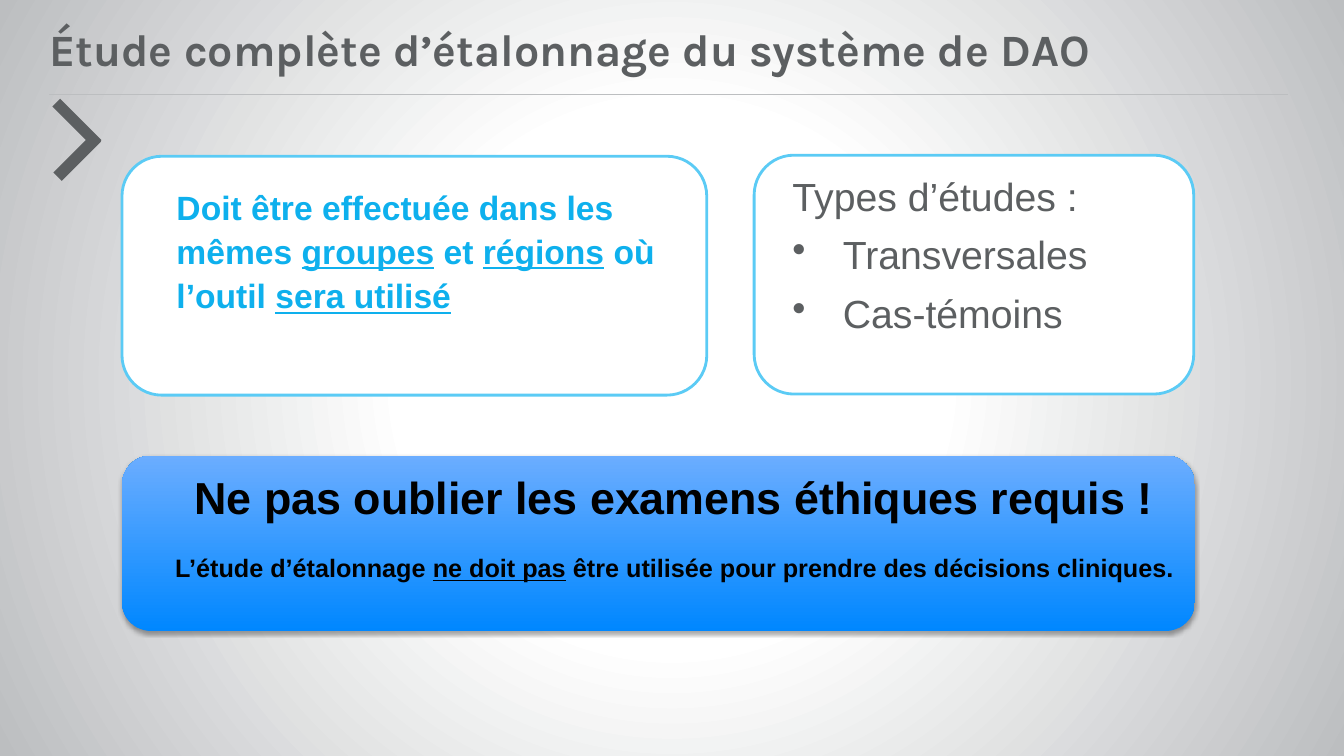
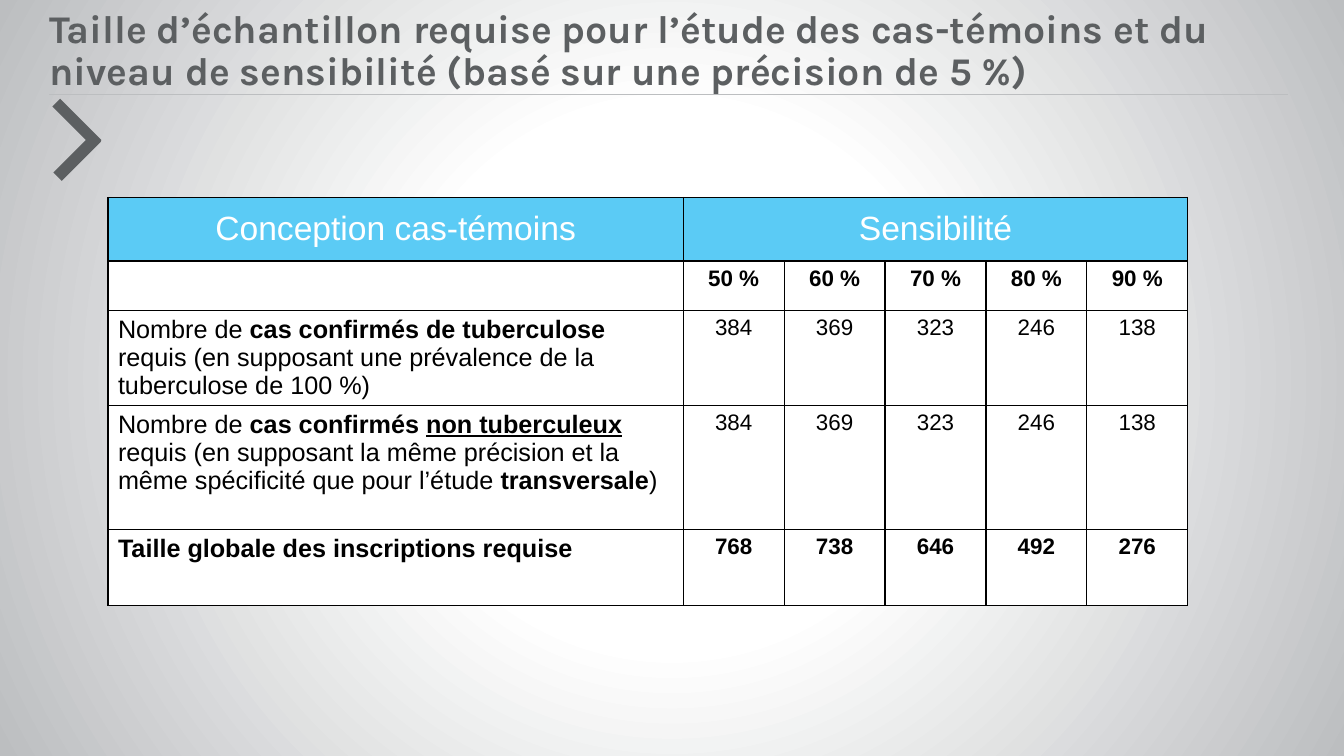
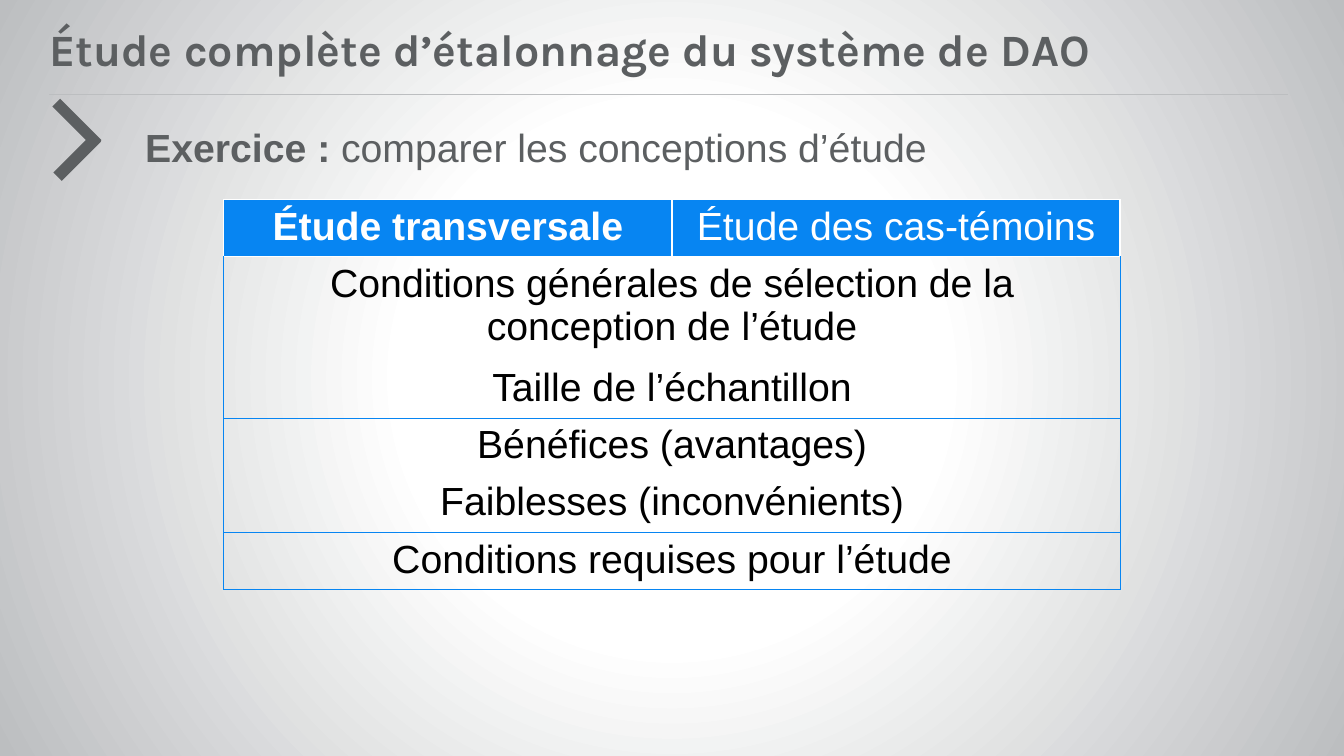
from pptx import Presentation, util as u
from pptx.dml.color import RGBColor
from pptx.enum import shapes, text
from pptx.oxml import parse_xml
from pptx.oxml.ns import nsdecls

W, H = 13.33, 7.5
COLORS = {"grey": "5C5F61", "rule": "BCBEC0", "white": "FFFFFF", "black": "000000",
          "sky": "5BCBF5", "cyan": "0EB0ED", "blue": "0785F2",
          "deep": "0087FF", "light": "6BADFF"}
CENTER, LEFT = text.PP_ALIGN.CENTER, text.PP_ALIGN.LEFT
TOP, MIDDLE = text.MSO_ANCHOR.TOP, text.MSO_ANCHOR.MIDDLE
RECT, ROUND = shapes.MSO_SHAPE.RECTANGLE, shapes.MSO_SHAPE.ROUNDED_RECTANGLE
BOLD, PLAIN, UNDER = {"bold": True}, {"bold": False}, {"underline": True}

# Boxes are (left, top, width, height) on a grid of 100 columns and 100 rows
TITLE = (3.68, 1.33, 89.1, 11.07)
CHEVRON = (3.5, 13, 4.4, 11.2)
RULE = (3.68, 12.53, 92.12)


def rgb(name):
    return RGBColor.from_string(COLORS[name])


def inside(box, x, y, w, h):
    """Part of a box, given as shares of its size."""
    left, top, width, height = box
    return left + x * width, top + y * height, w * width, h * height


def emu(box):
    x, y, w, h = box
    return [u.Inches(v * size / 100) for v, size in ((x, W), (y, H), (w, W), (h, H))]


def write(tf, paras, size=18, color="black", font="Arial", bold=False, align=LEFT,
          anchor=None, spacing=None, before=0, margin=0, indent=0, bullets=()):
    """Each paragraph is a list of runs: a string, or a string with its own format."""
    tf.word_wrap = True
    if anchor is not None:
        tf.vertical_anchor = anchor
    for i, runs in enumerate(paras):
        p = tf.paragraphs[0] if i == 0 else tf.add_paragraph()
        p.alignment = align
        if spacing:
            p.line_spacing = spacing
        p.space_before = u.Pt(before if i else 0)
        pPr = p._p.get_or_add_pPr()
        left, first = (0.75, -0.5) if i in bullets else (margin, indent)
        pPr.set("marL", str(u.Inches(left)))
        pPr.set("indent", str(u.Inches(first)))
        if i in bullets:
            pPr.append(parse_xml(f'<a:buChar {nsdecls("a")} char="•"/>'))
        for run in runs:
            words, extra = (run, {}) if isinstance(run, str) else run
            r = p.add_run()
            r.text = words
            r.font.name, r.font.color.rgb = font, rgb(color)
            r.font.size = u.Pt(extra.get("size", size))
            r.font.bold = extra.get("bold", bold)
            if extra.get("underline"):
                r.font.underline = True


def add_text(s, box, paras, **fmt):
    tf = s.shapes.add_textbox(*emu(box)).text_frame
    tf.margin_left = tf.margin_right = u.Inches(fmt.pop("side", 0))
    write(tf, paras, **fmt)


def add_box(parent, kind, box, fill=None, line=None):
    sp = parent.shapes.add_shape(kind, *emu(box))
    sp.shadow.inherit = False
    if fill:
        sp.fill.solid()
        sp.fill.fore_color.rgb = rgb(fill)
    if line:
        sp.line.color.rgb = rgb(line)
        sp.line.width = u.Pt(2)
    else:
        sp.line.fill.background()
    return sp


# Shared look: background, title, rule and chevron
def set_background(master):
    stops = "".join(f'<a:gs pos="{pos}000"><a:srgbClr val="{COLORS[c]}"/></a:gs>'
                    for pos, c in ((0, "white"), (35, "white"), (100, "rule")))
    cSld = master.element.cSld
    if cSld.bg is not None:
        cSld.remove(cSld.bg)
    cSld.insert(0, parse_xml(
        f'<p:bg {nsdecls("p", "a")}><p:bgPr><a:gradFill rotWithShape="1">'
        f'<a:gsLst>{stops}</a:gsLst><a:path path="circle">'
        '<a:fillToRect l="50000" t="50000" r="50000" b="50000"/></a:path>'
        '</a:gradFill><a:effectLst/></p:bgPr></p:bg>'))


def add_chevron(s, box):
    group = s.shapes.add_group_shape()
    for part, angle in (((0.04, 0.625, 0.94, 0.14), 135), ((0.01, 0.23, 0.99, 0.13), 225)):
        add_box(group, RECT, inside(box, *part), "grey").rotation = angle


def new_slide(prs, title, size=32):
    s = prs.slides.add_slide(prs.slide_layouts[5])
    x, y, w = RULE
    left, top, width, _ = emu((x, y, w, 0))
    rule = s.shapes.add_connector(shapes.MSO_CONNECTOR.STRAIGHT, left, top, left + width, top)
    rule.line.color.rgb = rgb("rule")
    rule.line.width = u.Pt(0.75)
    rule._element.spPr.append(parse_xml(f'<a:effectLst {nsdecls("a")}/>'))
    add_chevron(s, CHEVRON)
    ph = s.shapes.title
    ph.left, ph.top, ph.width, ph.height = emu(TITLE)
    tf = ph.text_frame
    tf.auto_size = text.MSO_AUTO_SIZE.NONE
    tf.margin_left = tf.margin_right = 0
    write(tf, [[title]], size=size, color="grey", font="Karla", bold=True,
          anchor=MIDDLE, spacing=0.9)
    return s


# Tables
def set_borders(cell, sides, color, width):
    """Draw the sides named among L, R, T and B, and clear the others."""
    tcPr = cell._tc.get_or_add_tcPr()
    for i, side in enumerate("LRTB"):
        paint = (f'<a:solidFill><a:srgbClr val="{COLORS[color]}"/></a:solidFill>'
                 if side in sides else "<a:noFill/>")
        tcPr.insert(i, parse_xml(
            f'<a:ln{side} {nsdecls("a")} w="{u.Pt(width)}">{paint}</a:ln{side}>'))


def add_grid(s, box, cols, rows):
    """Empty table whose columns and rows share the box by weight."""
    x, y, w, h = emu(box)
    table = s.shapes.add_table(len(rows), len(cols), x, y, w, h).table
    table.first_row = table.horz_banding = False
    for lines, weights, total, side in ((table.columns, cols, w, "width"),
                                        (table.rows, rows, h, "height")):
        for line, weight in zip(lines, weights):
            setattr(line, side, int(total * weight / sum(weights)))
    return table


def fill_cell(cell, runs, fill=None, sides="LRTB", line="black", width=1, **fmt):
    write(cell.text_frame, [runs], **fmt)
    cell.vertical_anchor = fmt.get("anchor", TOP)
    if fill:
        cell.fill.solid()
        cell.fill.fore_color.rgb = rgb(fill)
    else:
        cell.fill.background()
    set_borders(cell, sides, line, width)


def add_sample_table(s, box, head, body):
    table = add_grid(s, box, [5.7] + [1] * 5, [0.63, 0.49, 0.93, 1.23, 0.76])
    table.cell(0, 1).merge(table.cell(0, 5))
    for c in range(6):
        fill_cell(table.cell(0, c), head[c:c + 1], "sky", size=24, color="white",
                  align=CENTER, anchor=MIDDLE)
    for r, (label, values, bold) in enumerate(body, 1):
        fill_cell(table.cell(r, 0), label, "white", bold=bold)
        for c, value in enumerate(values, 1):
            fill_cell(table.cell(r, c), [value], "white", size=16, bold=bold, align=CENTER)


def add_design_table(s, box, head, body):
    table = add_grid(s, box, [1, 1], [1] * (len(body) + 1))
    for c, run in enumerate(head):
        fill_cell(table.cell(0, c), [run], "blue", line="white", size=28,
                  color="white", align=CENTER)
    for r, (label, sides) in enumerate(body, 1):
        table.cell(r, 0).merge(table.cell(r, 1))
        for c, runs in enumerate(([label], [])):
            fill_cell(table.cell(r, c), runs, sides=sides, line="blue", width=0.75,
                      size=28, align=CENTER)


# Regions of the first slide
def add_card(s, box, part, paras, **fmt):
    add_box(s, ROUND, box, "white", "sky")
    add_text(s, inside(box, *part), paras, spacing=1.1, before=5, **fmt)


def add_banner(s, box, paras):
    sp = add_box(s, ROUND, box)
    sp.fill.gradient()
    sp.fill.gradient_angle = 90
    for stop, color, pos in zip(sp.fill.gradient_stops, ("deep", "light"), (0, 1)):
        stop.color.rgb = rgb(color)
        stop.position = pos
    effects = sp._element.spPr.find("{*}effectLst")
    effects.append(parse_xml(
        f'<a:outerShdw {nsdecls("a")} blurRad="{u.Pt(3.1)}" dist="{u.Pt(1.8)}" '
        'dir="5400000" rotWithShape="0"><a:srgbClr val="000000">'
        '<a:alpha val="35000"/></a:srgbClr></a:outerShdw>'))
    add_text(s, inside(box, -0.03, 0.05, 1.09, 0.72), paras, bold=True,
             align=CENTER, before=21, side=0.1)


def study_slide(prs):
    s = new_slide(prs, "Étude complète d’étalonnage du système de DAO")
    add_card(s, (56.11, 20.53, 32.71, 31.6), (0.03, 0.03, 1.04, 0.93),
             [["Types d’études :"], ["Transversales"], ["Cas-témoins"]],
             size=28, color="grey", margin=0.5, indent=-0.25, bullets=(1, 2))
    add_card(s, (9.08, 20.67, 43.51, 31.6), (0.05, 0.09, 0.9, 0.81),
             [["Doit être effectuée dans les mêmes ", ("groupes", UNDER), " et ",
               ("régions", UNDER), " où l’outil ", ("sera utilisé", UNDER)]],
             size=24, color="cyan", bold=True, margin=0.25)
    add_banner(s, (9.08, 60.27, 79.82, 23.2),
               [[("Ne pas oublier les examens éthiques requis !", {"size": 32})],
                ["L’étude d’étalonnage ", ("ne doit pas", UNDER),
                 " être utilisée pour prendre des décisions cliniques."]])


def sample_slide(prs):
    s = new_slide(prs, "Taille d’échantillon requise pour l’étude des cas-témoins et du "
                  "niveau de sensibilité (basé sur une précision de 5 %)", size=28)
    counts = ["384", "369", "323", "246", "138"]
    add_sample_table(
        s, (8.03, 26.13, 80.35, 53.87), ["Conception cas-témoins", "Sensibilité"],
        [([], ["50 %", "60 %", "70 %", "80 %", "90 %"], True),
         (["Nombre de ", ("cas confirmés de tuberculose ", BOLD),
           "requis (en supposant une prévalence de la tuberculose de 100 %)"],
          counts, False),
         (["Nombre de ", ("cas confirmés ", BOLD), ("non tuberculeux", {**BOLD, **UNDER}),
           " requis (en supposant la même précision et la même spécificité que pour l’étude ",
           ("transversale", BOLD), ")"], counts, False),
         (["Taille globale des inscriptions requise"],
          ["768", "738", "646", "492", "276"], True)])


def exercise_slide(prs):
    s = new_slide(prs, "Étude complète d’étalonnage du système de DAO")
    add_text(s, (8.93, 15.07, 86.87, 9), [["Exercice : ",
             ("comparer les conceptions d’étude", PLAIN)]], size=28, color="grey",
             bold=True, spacing=1.1, margin=0.5, indent=-0.25)
    add_design_table(
        s, (16.65, 26.4, 66.69, 32.8),
        [("Étude transversale", BOLD), "Étude des cas-témoins"],
        [("Conditions générales de sélection de la conception de l’étude", "LR"),
         ("Taille de l’échantillon", "LRB"),
         ("Bénéfices (avantages)", "LRT"),
         ("Faiblesses (inconvénients)", "LRB"),
         ("Conditions requises pour l’étude", "LRTB")])


def main():
    prs = Presentation()
    prs.slide_width, prs.slide_height = u.Inches(W), u.Inches(H)
    set_background(prs.slide_master)
    for build in (study_slide, sample_slide, exercise_slide):
        build(prs)
    prs.save("out.pptx")


if __name__ == "__main__":
    main()
